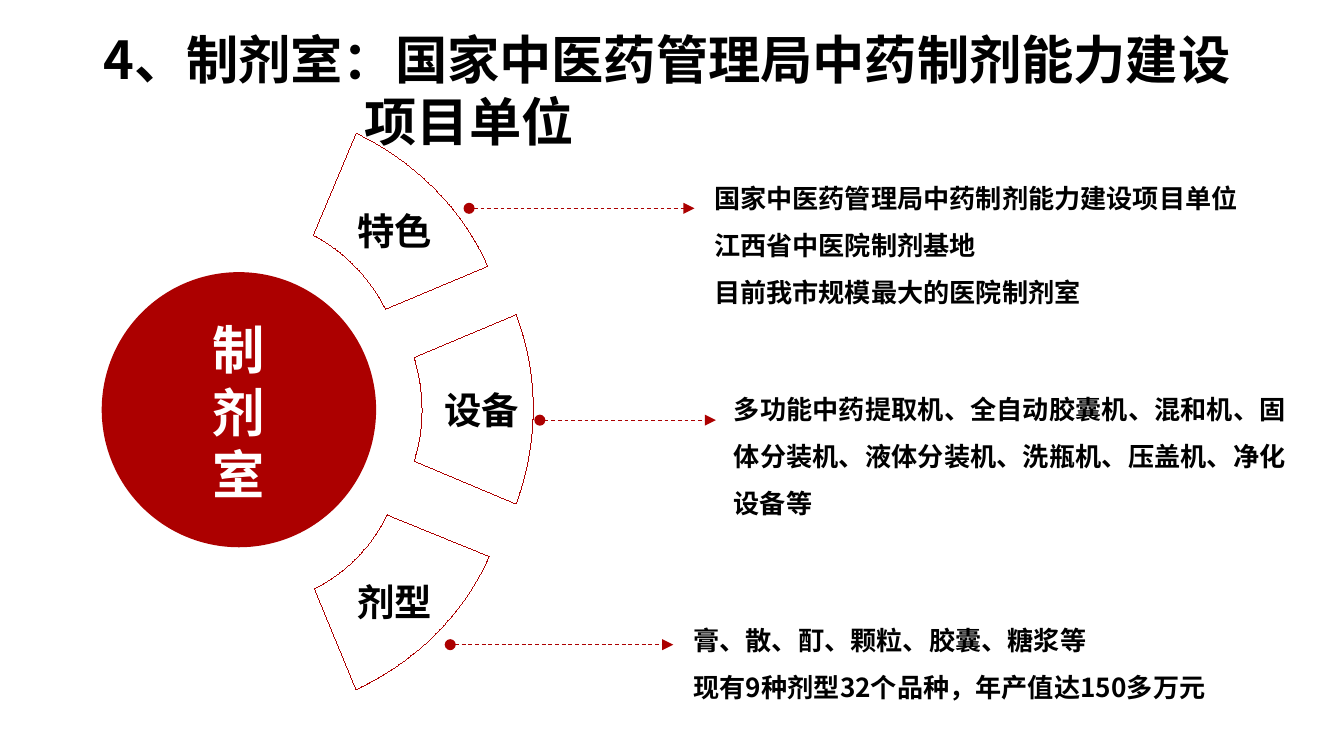
from lxml.etree import SubElement
from pptx import Presentation
from pptx.dml.color import RGBColor
from pptx.enum.dml import MSO_LINE_DASH_STYLE as DASH
from pptx.enum.shapes import MSO_CONNECTOR as CONNECTOR, MSO_SHAPE as SHAPE
from pptx.enum.text import MSO_ANCHOR as ANCHOR, PP_ALIGN as ALIGN
from pptx.oxml.ns import qn
from pptx.util import Pt

RED = RGBColor(0xAC, 0x00, 0x00)
BLACK = RGBColor(0x00, 0x00, 0x00)
WHITE = RGBColor(0xFF, 0xFF, 0xFF)
FONT = "Noto Sans CJK SC"
HAIRLINE = Pt(0.01)

TITLE = ["4、制剂室：国家中医药管理局中药制剂能力建设", "项目单位"]

SECTORS = [
    ("特色", (187.9, 111.6),
     [(190.8, 71.3), (221, 85.7), (247, 110.2), (261.4, 142.6)],
     [(206.6, 165.6), (198, 148.3), (184.3, 134.6), (167.8, 126)]),
    ("设备", (234.5, 207.2),
     [(276.5, 168.5), (289.4, 202.3), (288, 238.3), (276.5, 270)],
     [(221.8, 247), (227.5, 229.7), (227.5, 210.2), (221.8, 191.5)]),
    ("剂型", (187.9, 310.3),
     [(262.1, 298.1), (248.4, 329), (223.2, 354.2), (190.8, 369.4)],
     [(168.5, 315.4), (185.8, 306.7), (199.4, 292.3), (207.4, 275.8)]),
]

DETAILS = [
    ((382.6, 89.3, 296, 76.3),
     ["国家中医药管理局中药制剂能力建设项目单位", "江西省中医院制剂基地",
      "目前我市规模最大的医院制剂室"]),
    ((393.1, 202.3, 296, 76.3),
     ["多功能中药提取机、全自动胶囊机、混和机、固体分装机、液体分装机、洗瓶机、压盖机、净化设备等"]),
    ((371.5, 326.2, 293.8, 51.1),
     ["膏、散、酊、颗粒、胶囊、糖浆等", "现有9种剂型32个品种，年产值达150多万元"]),
]

ARROWS = [(251.3, 372, 111.6), (289.2, 383.5, 225.1), (241.2, 360.7, 345.4)]


def write(tf, lines, size, color=BLACK, align=ALIGN.LEFT, spacing=1.0):
    """Fill a text frame with one bold paragraph per line."""
    tf.word_wrap = True
    tf.vertical_anchor = ANCHOR.TOP
    for i, line in enumerate(lines):
        p = tf.paragraphs[0] if i == 0 else tf.add_paragraph()
        p.text = line
        p.alignment = align
        p.line_spacing = spacing
        font = p.font
        font.size, font.bold, font.name = Pt(size), True, FONT
        font.color.rgb = color
        SubElement(font._rPr, qn("a:ea"), typeface=FONT)


def add_title(s):
    """Place the title with its second line indented."""
    title = s.shapes.title
    title.left, title.top, title.width, title.height = Pt(48.2), Pt(10.8), Pt(668.9), Pt(74.9)
    write(title.text_frame, TITLE, 28)
    pPr = title.text_frame.paragraphs[1]._p.get_or_add_pPr()
    pPr.set("marL", str(Pt(140)))
    pPr.set("indent", "0")


def add_text(s, box, lines, size, inset=(0, 0), **style):
    """Add a text box at a box given in points."""
    tf = s.shapes.add_textbox(*map(Pt, box)).text_frame
    tf.margin_left = tf.margin_right = Pt(inset[0])
    tf.margin_top = tf.margin_bottom = Pt(inset[1])
    write(tf, lines, size, **style)


def bend(segments):
    """Merge three line segments into one cubic Bezier curve."""
    curve = segments[0].makeelement(qn("a:cubicBezTo"))
    segments[0].addprevious(curve)
    for segment in segments:
        curve.append(segment[0])
        segment.getparent().remove(segment)


def add_sector(s, label, position, outer, inner):
    """Add an outlined ring sector and its label."""
    points = [(Pt(x), Pt(y)) for x, y in outer + inner]
    builder = s.shapes.build_freeform(*points[0])
    builder.add_line_segments(points[1:], close=True)
    sp = builder.convert_to_shape()
    segments = list(sp._element.iter(qn("a:lnTo")))
    bend(segments[:3])
    bend(segments[4:7])
    sp.shadow.inherit = False
    sp.fill.background()
    sp.line.color.rgb = RED
    sp.line.width = HAIRLINE
    add_text(s, (*position, 46.8, 24.5), [label], 20, align=ALIGN.CENTER)


def add_arrow(s, start, end, y):
    """Add a dashed horizontal arrow that starts with a dot."""
    arrow = s.shapes.add_connector(CONNECTOR.STRAIGHT, Pt(start), Pt(y), Pt(end), Pt(y))
    arrow.line.color.rgb = RED
    arrow.line.width = Pt(0.5)
    arrow.line.dash_style = DASH.DASH
    ln = arrow.line._get_or_add_ln()
    SubElement(ln, qn("a:headEnd"), type="oval")
    SubElement(ln, qn("a:tailEnd"), type="triangle")
    SubElement(arrow._element.spPr, qn("a:effectLst"))


def add_hub(s):
    """Add the red circle and its stacked name."""
    sp = s.shapes.add_shape(SHAPE.OVAL, Pt(54.5), Pt(145.8), Pt(147), Pt(147.4))
    sp.shadow.inherit = False
    sp.fill.solid()
    sp.fill.fore_color.rgb = RED
    sp.line.fill.background()
    add_text(s, (84.2, 166.3, 87.1, 108.7), list("制剂室"), 28, inset=(7.2, 3.6),
             color=WHITE, align=ALIGN.CENTER)


def main():
    """Build and save the slide."""
    prs = Presentation()
    prs.slide_width, prs.slide_height = Pt(720), Pt(405)
    s = prs.slides.add_slide(prs.slide_layouts[5])
    add_title(s)
    for sector in SECTORS:
        add_sector(s, *sector)
    for box, lines in DETAILS:
        add_text(s, box, lines, 14, align=ALIGN.JUSTIFY, spacing=1.5)
    for arrow in ARROWS:
        add_arrow(s, *arrow)
    add_hub(s)
    prs.save("out.pptx")


if __name__ == "__main__":
    main()
